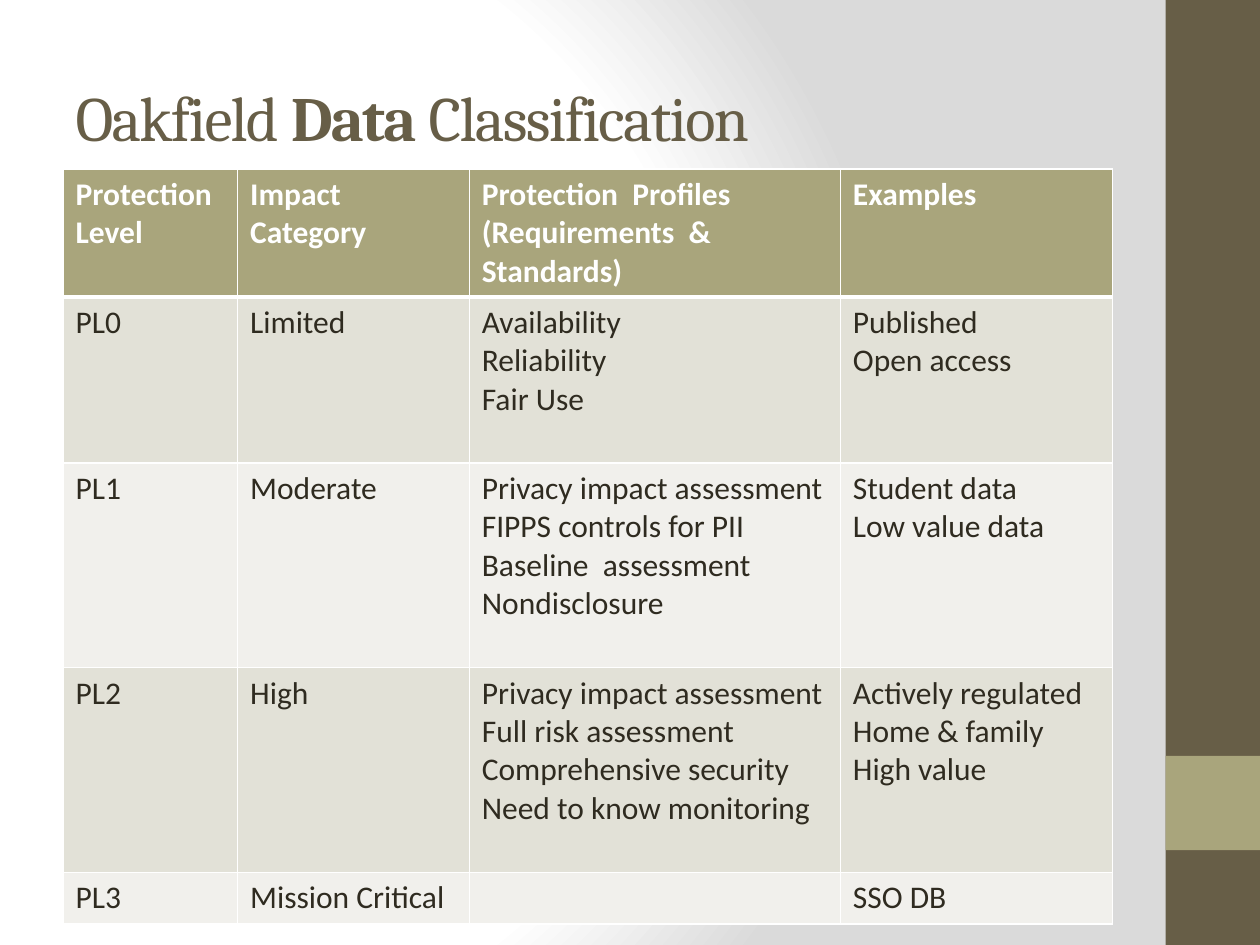
import pptx
import pptx.dml.color
import pptx.enum.shapes
import pptx.enum.text
import pptx.oxml.ns
import pptx.util
from lxml import etree

Cm = pptx.util.Cm
Pt = pptx.util.Pt
qn = pptx.oxml.ns.qn

COLORS = {
    "brown": "675E47",
    "olive": "A9A57C",
    "ink": "2F2B20",
    "white": "FFFFFF",
    "grey": "DADADA",
    "band_dark": "E2E1D7",
    "band_light": "F1F0EC",
}


def rgb(name):
    return pptx.dml.color.RGBColor.from_string(COLORS[name])


def add_border(properties, position, side, width):
    line = etree.Element(qn(f"a:{side}"), w=str(Pt(width)))
    fill = etree.SubElement(line, qn("a:solidFill"))
    etree.SubElement(fill, qn("a:srgbClr"), val=COLORS["white"])
    properties.insert(position, line)


deck = pptx.Presentation()
deck.slide_width = Cm(25.4)
deck.slide_height = Cm(19.05)
slide = deck.slides.add_slide(deck.slide_layouts[5])

slide.background.fill.gradient()
backdrop = slide._element.find(".//" + qn("a:gradFill"))
for child in list(backdrop):
    backdrop.remove(child)
stops = etree.SubElement(backdrop, qn("a:gsLst"))
for percent, name in [(0, "white"), (75, "white"), (100, "grey")]:
    stop = etree.SubElement(stops, qn("a:gs"), pos=str(percent * 1000))
    etree.SubElement(stop, qn("a:srgbClr"), val=COLORS[name])
circle = etree.SubElement(backdrop, qn("a:path"), path="circle")
etree.SubElement(circle, qn("a:fillToRect"), l="20000", t="50000", r="100000", b="50000")

for top, height, name in [(0, 19.05, "brown"), (15.24, 1.9, "olive")]:
    sidebar = slide.shapes.add_shape(
        pptx.enum.shapes.MSO_SHAPE.RECTANGLE, Cm(23.5), Cm(top), Cm(1.9), Cm(height))
    sidebar.shadow.inherit = False
    sidebar.fill.solid()
    sidebar.fill.fore_color.rgb = rgb(name)
    sidebar.line.fill.background()

heading = slide.shapes.title
heading.left, heading.top, heading.width, heading.height = Cm(1.27), Cm(0.76), Cm(21.16), Cm(3.18)
heading.text_frame.vertical_anchor = pptx.enum.text.MSO_ANCHOR.MIDDLE
heading_line = heading.text_frame.paragraphs[0]
heading_line.alignment = pptx.enum.text.PP_ALIGN.LEFT
for words, bold in [("Oakfield ", False), ("Data ", True), ("Classification", False)]:
    part = heading_line.add_run()
    part.text = words
    part.font.name = "Cambria"
    part.font.size = Pt(36)
    part.font.bold = bold
    part.font.color.rgb = rgb("brown")
    part.font._element.set("spc", "-100")

levels = [
    ["Protection Level", "Impact \vCategory",
     "Protection  Profiles\v(Requirements  & Standards)", "Examples"],
    ["PL0", "Limited", "Availability\nReliability\nFair Use", "Published\vOpen access"],
    ["PL1", "Moderate",
     "Privacy impact assessment\nFIPPS controls for PII\nBaseline  assessment\vNondisclosure",
     "Student data\nLow value data"],
    ["PL2", "High",
     "Privacy impact assessment\nFull risk assessment\n"
     "Comprehensive security\nNeed to know monitoring",
     "Actively regulated\nHome & family\nHigh value"],
    ["PL3", "Mission Critical", "", "SSO DB"],
]
column_widths = [3.52, 4.67, 7.48, 5.49]
row_heights = [2.58, 3.34, 4.13, 4.13, 1.04]

classification = slide.shapes.add_table(
    len(levels), len(column_widths), Cm(1.27), Cm(3.41),
    Cm(sum(column_widths)), Cm(sum(row_heights))).table
for column, width in zip(classification.columns, column_widths):
    column.width = Cm(width)
for row, height in zip(classification.rows, row_heights):
    row.height = Cm(height)

for row_number, level in enumerate(levels):
    is_header = row_number == 0
    band = "olive" if is_header else ("band_light", "band_dark")[row_number % 2]
    for column_number, words in enumerate(level):
        cell = classification.cell(row_number, column_number)
        cell.fill.solid()
        cell.fill.fore_color.rgb = rgb(band)
        cell.text_frame.text = words
        for paragraph in cell.text_frame.paragraphs:
            paragraph.font.size = Pt(18)
            for run in paragraph.runs:
                run.font.name = "Calibri"
                run.font.size = Pt(18)
                run.font.bold = is_header
                run.font.color.rgb = rgb("white" if is_header else "ink")
        edges = {"lnL": 1, "lnR": 1, "lnT": 3 if row_number == 1 else 1, "lnB": 3 if is_header else 1}
        for position, (side, width) in enumerate(edges.items()):
            add_border(cell._tc.get_or_add_tcPr(), position, side, width)

deck.save("out.pptx")
